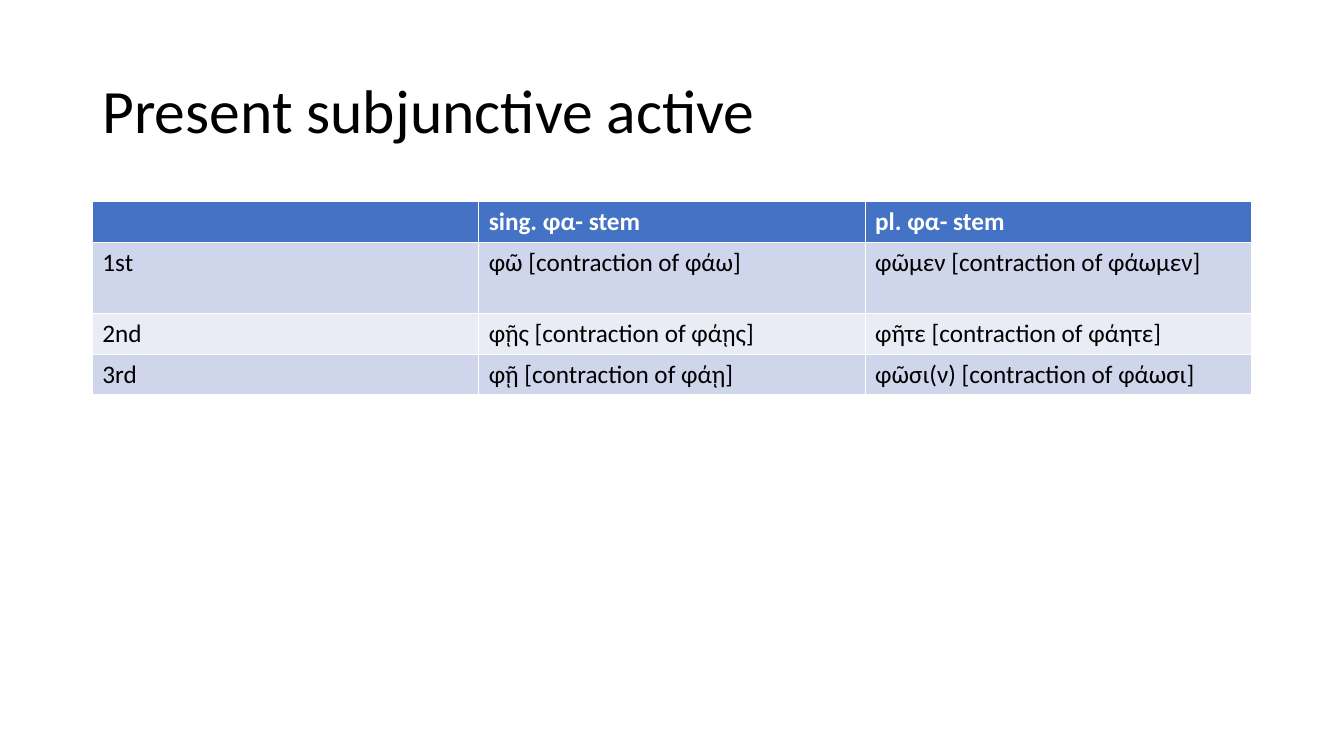
import pptx
import pptx.util
import pptx.dml.color
import pptx.enum.text

Pt = pptx.util.Pt
HUES = {
    "head": "4472C4",
    "dark": "CFD5EA",
    "light": "E9EBF5",
    "white": "FFFFFF",
    "black": "000000",
}
LEFT, WIDTH = 66, 828


def paint(font, size, hue, bold=False):
    font.name = "Calibri"
    font.size = Pt(size)
    font.bold = bold
    font.color.rgb = pptx.dml.color.RGBColor.from_string(HUES[hue])


deck = pptx.Presentation()
deck.slide_width, deck.slide_height = Pt(960), Pt(540)
slide = deck.slides.add_slide(deck.slide_layouts[5])

# Title
title = slide.shapes.title
title.left, title.top = Pt(LEFT), Pt(28.75)
title.width, title.height = Pt(WIDTH), Pt(104.4)
frame = title.text_frame
frame.text = "Present subjunctive active"
frame.vertical_anchor = pptx.enum.text.MSO_ANCHOR.MIDDLE
line = frame.paragraphs[0]
line.alignment = pptx.enum.text.PP_ALIGN.LEFT
line.line_spacing = 0.9
paint(line.runs[0].font, 44, "black")

# Verb forms; the table's default style draws the white rules
forms = [
    ("", "sing. φα- stem", "pl. φα- stem"),
    ("1st", "φῶ [contraction of φάω]", "φῶμεν [contraction of φάωμεν]"),
    ("2nd", "φῇς [contraction of φάῃς]", "φῆτε [contraction of φάητε]"),
    ("3rd", "φῇ [contraction of φάῃ]", "φῶσι(ν) [contraction of φάωσι]"),
]
heights = [29.2, 50.8, 29.2, 29.2]
fills = ["head", "dark", "light", "dark"]
table = slide.shapes.add_table(
    len(forms), 3, Pt(LEFT), Pt(143.75), Pt(WIDTH), Pt(sum(heights))
).table
for col in table.columns:
    col.width = Pt(WIDTH / 3)

for r, words in enumerate(forms):
    table.rows[r].height = Pt(heights[r])
    for c, word in enumerate(words):
        cell = table.cell(r, c)
        cell.fill.solid()
        cell.fill.fore_color.rgb = pptx.dml.color.RGBColor.from_string(HUES[fills[r]])
        cell.text_frame.text = word
        for run in cell.text_frame.paragraphs[0].runs:
            paint(run.font, 18, "black" if r else "white", r == 0)

deck.save("out.pptx")
